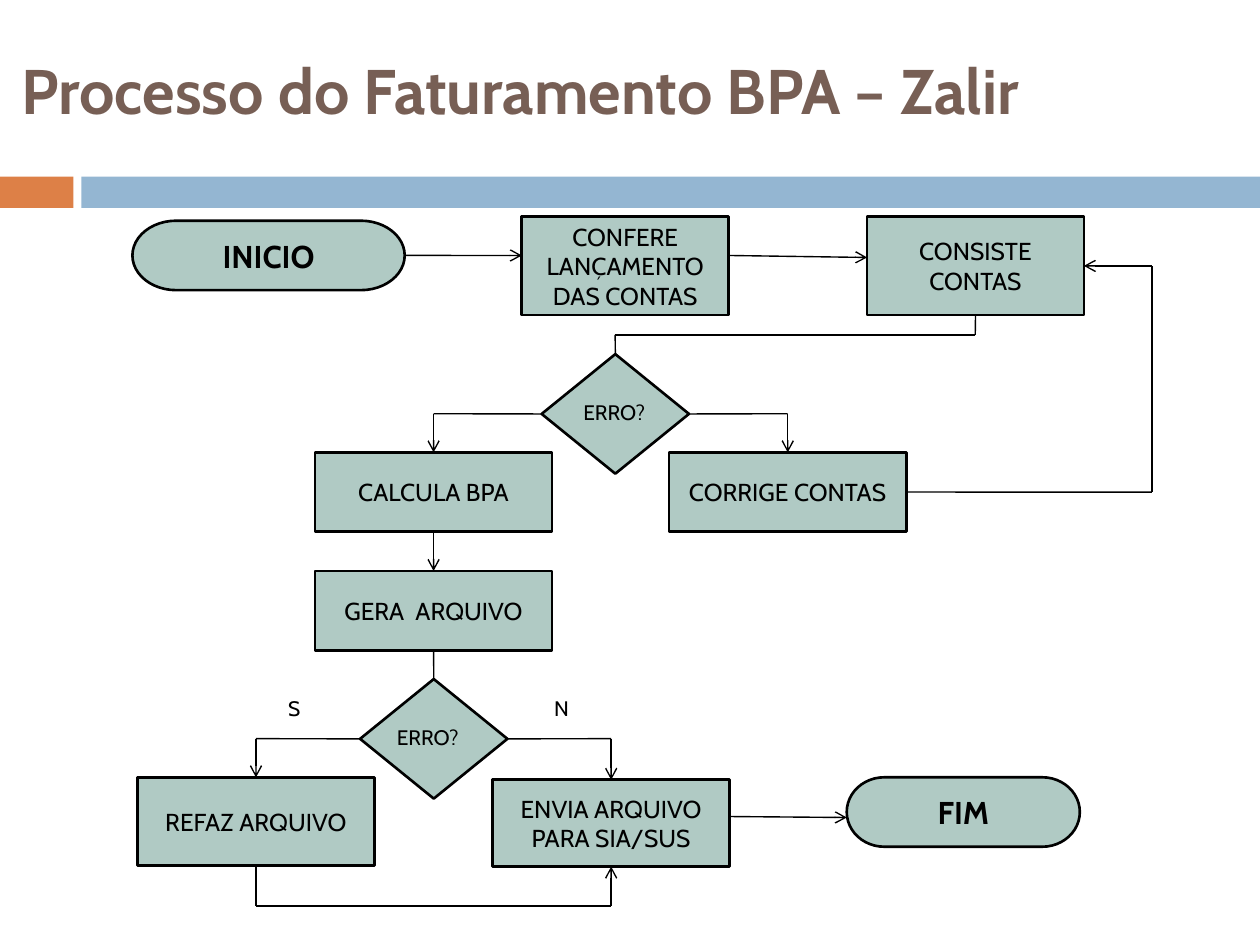
"""Build the BPA billing process flowchart slide."""
from lxml import etree
from pptx import Presentation
from pptx.dml.color import RGBColor
from pptx.enum.shapes import MSO_CONNECTOR, MSO_SHAPE
from pptx.enum.text import MSO_ANCHOR, MSO_AUTO_SIZE, PP_ALIGN
from pptx.oxml.ns import qn
from pptx.util import Cm, Pt

STRAIGHT = MSO_CONNECTOR.STRAIGHT
RECT = MSO_SHAPE.RECTANGLE
PROCESS = MSO_SHAPE.FLOWCHART_PROCESS
DECISION = MSO_SHAPE.FLOWCHART_DECISION
TERMINATOR = MSO_SHAPE.FLOWCHART_TERMINATOR
MIDDLE = MSO_ANCHOR.MIDDLE
LEFT, CENTER = PP_ALIGN.LEFT, PP_ALIGN.CENTER
TOP_SIDE, LEFT_SIDE, BOTTOM_SIDE, RIGHT_SIDE = range(4)

BLACK = RGBColor(0x00, 0x00, 0x00)
BROWN = RGBColor(0x77, 0x5F, 0x55)
ORANGE = RGBColor(0xDD, 0x80, 0x47)
BLUE = RGBColor(0x94, 0xB6, 0xD2)
GREEN = RGBColor(0xB0, 0xCA, 0xC4)
FONT = "Cabin"


def add_text(tf, text, size, color=BLACK, bold=False, align=LEFT):
    p = tf.paragraphs[0]
    p.alignment = align
    r = p.add_run()
    r.text = text
    r.font.name = FONT
    r.font.size = Pt(size)
    r.font.bold = bold
    r.font.color.rgb = color


def add_filled(kind, x, y, w, h, color):
    sp = s.shapes.add_shape(kind, Cm(x), Cm(y), Cm(w), Cm(h))
    sp.shadow.inherit = False
    sp.fill.solid()
    sp.fill.fore_color.rgb = color
    sp.line.fill.background()
    return sp


prs = Presentation()
prs.slide_width, prs.slide_height = Cm(25.4), Cm(19.05)
s = prs.slides.add_slide(prs.slide_layouts[5])

title = s.shapes.title
title.left, title.top, title.width, title.height = Cm(0.18), Cm(0.64), Cm(24.64), Cm(2.34)
title.text_frame.vertical_anchor = MIDDLE
title.text_frame.auto_size = MSO_AUTO_SIZE.NONE
add_text(title.text_frame, "Processo do Faturamento BPA – Zalir", 36, BROWN, True)

add_filled(RECT, 0, 3.56, 1.48, 0.63, ORANGE)
add_filled(RECT, 1.64, 3.56, 23.76, 0.63, BLUE)

steps = {
    "inicio": (TERMINATOR, 2.67, 4.45, 5.49, 1.4, "INICIO"),
    "confere": (PROCESS, 10.52, 4.37, 4.17, 1.98, "CONFERE LANÇAMENTO DAS CONTAS"),
    "consiste": (PROCESS, 17.48, 4.37, 4.37, 1.98, "CONSISTE CONTAS"),
    "erro_contas": (DECISION, 10.92, 7.14, 2.97, 2.41, ""),
    "calcula": (PROCESS, 6.35, 9.12, 4.78, 1.6, "CALCULA BPA"),
    "corrige": (PROCESS, 13.49, 9.12, 4.78, 1.6, "CORRIGE CONTAS"),
    "gera": (PROCESS, 6.35, 11.51, 4.78, 1.6, "GERA  ARQUIVO"),
    "erro_arquivo": (DECISION, 7.26, 13.69, 2.97, 2.41, ""),
    "refaz": (PROCESS, 2.77, 15.67, 4.78, 1.78, "REFAZ ARQUIVO"),
    "envia": (PROCESS, 9.93, 15.72, 4.78, 1.75, "ENVIA ARQUIVO PARA SIA/SUS"),
    "fim": (TERMINATOR, 17.07, 15.67, 4.7, 1.4, "FIM"),
}
nodes = {}
for name, (kind, x, y, w, h, text) in steps.items():
    sp = nodes[name] = add_filled(kind, x, y, w, h, GREEN)
    sp.line.color.rgb = BLACK
    sp.line.width = Pt(1.5)
    if text:
        terminal = kind == TERMINATOR
        sp.text_frame.word_wrap = True
        sp.text_frame.vertical_anchor = MIDDLE
        add_text(sp.text_frame, text, 18 if terminal else 14, bold=terminal, align=CENTER)

labels = [
    ("ERRO?", 11.51, 7.92, 1.98),
    ("ERRO?", 7.75, 14.48, 1.98),
    ("S", 5.56, 13.89, 0.74),
    ("N", 10.92, 13.89, 0.79),
]
for text, x, y, w in labels:
    tf = s.shapes.add_textbox(Cm(x), Cm(y), Cm(w), Cm(0.76)).text_frame
    tf.word_wrap = False
    tf.auto_size = MSO_AUTO_SIZE.SHAPE_TO_FIT_TEXT
    add_text(tf, text, 12)

routes = [
    (True, ("inicio", RIGHT_SIDE), (10.52, 5.15)),
    (True, (14.69, 5.15), (17.48, 5.19)),
    (False, ("consiste", BOTTOM_SIDE), (19.66, 6.75), (12.4, 6.75), ("erro_contas", TOP_SIDE)),
    (True, ("erro_contas", LEFT_SIDE), (8.74, 8.34), ("calcula", TOP_SIDE)),
    (True, ("erro_contas", RIGHT_SIDE), (15.88, 8.34), ("corrige", TOP_SIDE)),
    (True, ("corrige", RIGHT_SIDE), (23.22, 9.92), (23.22, 5.36), ("consiste", RIGHT_SIDE)),
    (True, ("calcula", BOTTOM_SIDE), ("gera", TOP_SIDE)),
    (False, ("gera", BOTTOM_SIDE), ("erro_arquivo", TOP_SIDE)),
    (True, ("erro_arquivo", LEFT_SIDE), (5.16, 14.89), ("refaz", TOP_SIDE)),
    (True, ("erro_arquivo", RIGHT_SIDE), (12.32, 14.89), ("envia", TOP_SIDE)),
    (True, ("refaz", BOTTOM_SIDE), (5.16, 18.26), (12.32, 18.26), ("envia", BOTTOM_SIDE)),
    (True, (14.71, 16.46), (17.07, 16.48)),
]
for arrow, *points in routes:
    for start, end in zip(points, points[1:]):
        line = s.shapes.add_connector(STRAIGHT, 0, 0, 0, 0)
        if start[0] in nodes:
            line.begin_connect(nodes[start[0]], start[1])
        else:
            line.begin_x, line.begin_y = Cm(start[0]), Cm(start[1])
        if end[0] in nodes:
            line.end_connect(nodes[end[0]], end[1])
        else:
            line.end_x, line.end_y = Cm(end[0]), Cm(end[1])
        line.line.color.rgb = BLACK
        line.line.width = Pt(0.79)
        sp_pr = line.line._get_or_add_ln().getparent()
        etree.SubElement(sp_pr, qn("a:effectLst"))
    if arrow:
        etree.SubElement(line.line._get_or_add_ln(), qn("a:tailEnd"), type="arrow")

prs.save("out.pptx")
